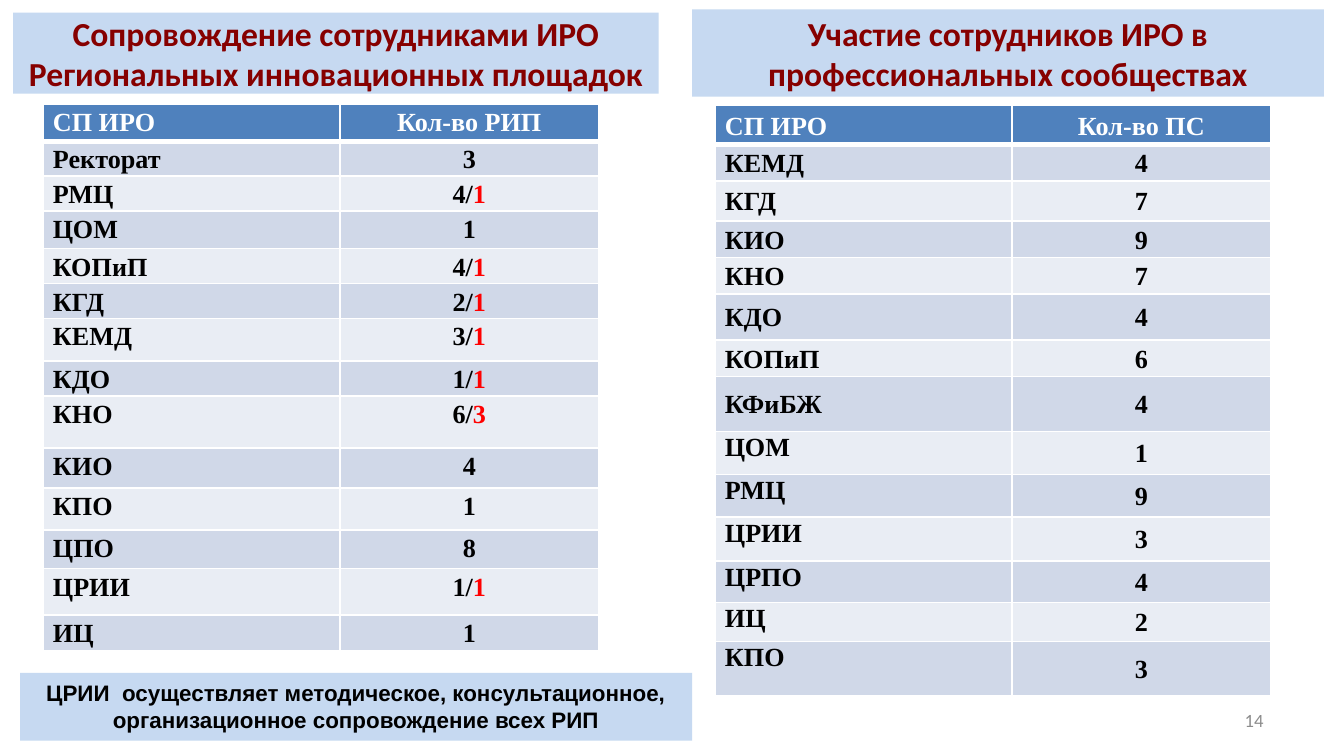
from lxml.etree import SubElement
from pptx import Presentation
from pptx.dml.color import RGBColor
from pptx.enum.shapes import MSO_SHAPE
from pptx.enum.text import MSO_ANCHOR, PP_ALIGN
from pptx.oxml.ns import qn
from pptx.util import Cm, Pt

COLORS = {
    "panel": "C6D9F1", "title": "860000", "header": "4F81BD",
    "odd": "D0D8E8", "even": "E9EDF4", "white": "FFFFFF",
    "black": "000000", "red": "FF0000", "number": "8C8C8C",
}
COLUMN_WIDTHS = (5.61, 4.88)

# Rows: department, count, row height in cm
PLATFORMS = [
    ("СП ИРО", "Кол-во РИП", 0.7), ("Ректорат", "3", 0.66), ("РМЦ", "4/1", 0.66),
    ("ЦОМ", "1", 0.71), ("КОПиП", "4/1", 0.66), ("КГД", "2/1", 0.66),
    ("КЕМД", "3/1", 0.81), ("КДО", "1/1", 0.66), ("КНО", "6/3", 0.98),
    ("КИО", "4", 0.76), ("КПО", "1", 0.79), ("ЦПО", "8", 0.73),
    ("ЦРИИ", "1/1", 0.88), ("ИЦ", "1", 0.68),
]
COMMUNITIES = [
    ("СП ИРО", "Кол-во ПС", 0.74), ("КЕМД", "4", 0.69), ("КГД", "7", 0.76),
    ("КИО", "9", 0.69), ("КНО", "7", 0.69), ("КДО", "4", 0.87),
    ("КОПиП", "6", 0.69), ("КФиБЖ", "4", 1.04), ("ЦОМ", "1", 0.81),
    ("РМЦ", "9", 0.81), ("ЦРИИ", "3", 0.83), ("ЦРПО", "4", 0.78),
    ("ИЦ", "2", 0.74), ("КПО", "3", 1.03),
]


def color(name):
    return RGBColor.from_string(COLORS[name])


def write(frame, text, font="Calibri", size=18, fill="black", bold=True,
          align=PP_ALIGN.CENTER, spacing=None, accent=None):
    """Write one paragraph; what follows a slash takes the accent colour."""
    paragraph = frame.paragraphs[0]
    paragraph.alignment = align
    if spacing:
        paragraph.line_spacing = spacing
    parts = [(text, fill)]
    if accent and "/" in text:
        main, extra = text.split("/")
        parts = [(main + "/", fill), (extra, accent)]
    for part, part_color in parts:
        run = paragraph.add_run()
        run.text = part
        run.font.name, run.font.size, run.font.bold = font, Pt(size), bold
        run.font.color.rgb = color(part_color)


def add_panel(slide, box, text, anchor=MSO_ANCHOR.MIDDLE, **text_format):
    shape = slide.shapes.add_shape(MSO_SHAPE.RECTANGLE, *map(Cm, box))
    shape.shadow.inherit = False
    shape.fill.solid()
    shape.fill.fore_color.rgb = color("panel")
    shape.line.fill.background()
    shape.text_frame.word_wrap = True
    shape.text_frame.vertical_anchor = anchor
    write(shape.text_frame, text, **text_format)


def set_borders(cell, top, bottom):
    properties = cell._tc.get_or_add_tcPr()
    sides = {"a:lnL": 1, "a:lnR": 1, "a:lnT": top, "a:lnB": bottom}
    for index, (side, width) in enumerate(sides.items()):
        line = properties.makeelement(qn(side), {"w": str(Pt(width))})
        fill = SubElement(line, qn("a:solidFill"))
        SubElement(fill, qn("a:srgbClr"), val=COLORS["white"])
        properties.insert(index, line)


def add_count_table(slide, left, top, rows, spacing, middle_rows):
    """Names in the first middle_rows rows are centred vertically."""
    heights = [height for _, _, height in rows]
    box = (left, top, sum(COLUMN_WIDTHS), sum(heights))
    table = slide.shapes.add_table(len(rows), 2, *map(Cm, box)).table
    for column, width in zip(table.columns, COLUMN_WIDTHS):
        column.width = Cm(width)
    for row_index, (name, count, height) in enumerate(rows):
        table.rows[row_index].height = Cm(height)
        header = row_index == 0
        background = "header" if header else ("even", "odd")[row_index % 2]
        for column_index, text in enumerate((name, count)):
            cell = table.cell(row_index, column_index)
            cell.margin_left = cell.margin_right = Cm(0.18)
            cell.margin_top = cell.margin_bottom = 0
            centred = row_index < middle_rows or (middle_rows and column_index)
            cell.vertical_anchor = MSO_ANCHOR.MIDDLE if centred else MSO_ANCHOR.TOP
            cell.fill.solid()
            cell.fill.fore_color.rgb = color(background)
            set_borders(cell, 3 if row_index == 1 else 1, 3 if header else 1)
            write(cell.text_frame, text, font="Times New Roman", size=14,
                  fill="white" if header else "black", accent="red",
                  align=PP_ALIGN.CENTER if column_index else PP_ALIGN.LEFT,
                  spacing=1.15 if header else spacing)


def add_page_number(slide, box, text):
    frame = slide.shapes.add_textbox(*map(Cm, box)).text_frame
    frame.word_wrap = True
    frame.vertical_anchor = MSO_ANCHOR.MIDDLE
    write(frame, text, size=10, fill="number", bold=False, align=PP_ALIGN.RIGHT)


def main():
    presentation = Presentation()
    presentation.slide_width, presentation.slide_height = Cm(25.4), Cm(14.29)
    slide = presentation.slides.add_slide(presentation.slide_layouts[6])

    # Left: innovation platforms
    add_panel(slide, (0.25, 0.24, 12.2, 1.53),
              "Сопровождение сотрудниками ИРО Региональных инновационных площадок",
              fill="title")
    add_count_table(slide, 0.82, 1.97, PLATFORMS, spacing=1.15, middle_rows=0)
    add_panel(slide, (0.38, 12.72, 12.7, 1.28),
              "ЦРИИ  осуществляет методическое, консультационное, "
              "организационное сопровождение всех РИП",
              anchor=MSO_ANCHOR.TOP, font="Arial", size=12)

    # Right: professional communities
    add_panel(slide, (13.08, 0.18, 11.94, 1.65),
              "Участие сотрудников ИРО в профессиональных сообществах",
              fill="title")
    add_count_table(slide, 13.52, 1.99, COMMUNITIES, spacing=1.07, middle_rows=8)

    add_page_number(slide, (18.2, 13.24, 5.93, 0.76), "14")
    presentation.save("out.pptx")


if __name__ == "__main__":
    main()
